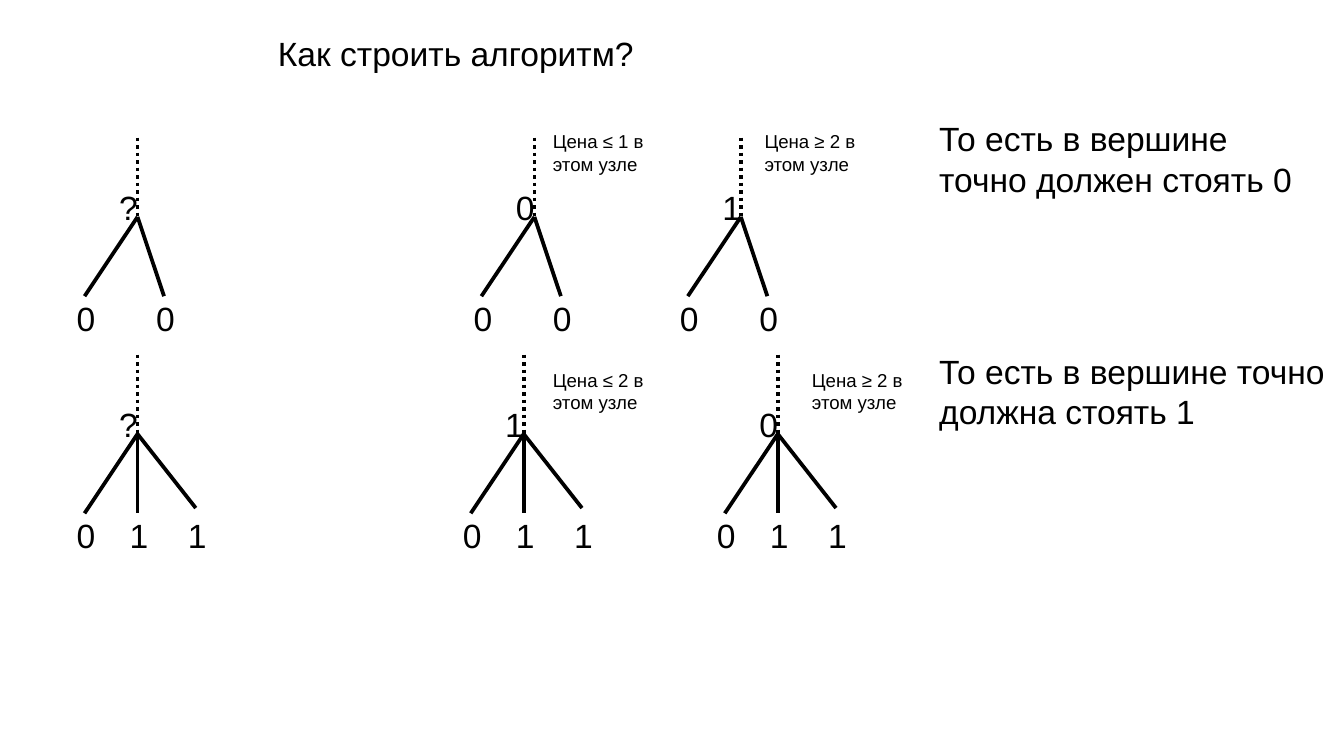
from pptx import Presentation
from pptx.dml.color import RGBColor
from pptx.enum.dml import MSO_LINE
from pptx.enum.shapes import MSO_CONNECTOR
from pptx.util import Pt
from lxml import etree

BLACK = RGBColor(0, 0, 0)
DOTS = MSO_LINE.ROUND_DOT
LINE = MSO_CONNECTOR.STRAIGHT
EFFECT = "{http://schemas.openxmlformats.org/drawingml/2006/main}effectLst"

deck = Presentation()
deck.slide_width, deck.slide_height = Pt(720), Pt(405)
slide = deck.slides.add_slide(deck.slide_layouts[6])


def write(text, left, top, width, height, size=18):
    box = slide.shapes.add_textbox(Pt(left), Pt(top), Pt(width), Pt(height))
    box.text_frame.word_wrap = True
    para = box.text_frame.paragraphs[0]
    para.text = text
    para.font.size = Pt(size)
    para.font.name = "Arial"
    para.font.color.rgb = BLACK


def draw(left, top, right, end, dash=None):
    edge = slide.shapes.add_connector(LINE, Pt(left), Pt(top), Pt(right), Pt(end))
    edge.line.color.rgb = BLACK
    edge.line.width = Pt(0)
    if dash:
        edge.line.dash_style = dash
    etree.SubElement(edge._element.spPr, EFFECT)


write("Как строить алгоритм?", 141.8, 14.2, 382.3, 27.4)

pair = [("0", -28.4, 85), ("0", 14.2, 85)]
trio = [("0", -28.4, 85), ("1", 0, 85), ("1", 31.2, 82.2)]
trees = [
    (73.7, 73.7, "?", pair),
    (286.3, 73.7, "0", pair),
    (396.9, 73.7, "1", pair),
    (73.7, 190, "?", trio),
    (280.6, 190, "1", trio),
    (416.7, 190, "0", trio),
]
for x, y, root, leaves in trees:
    fork = y + 42.5
    draw(x, y, x, fork, DOTS)
    write(root, x - 17, y + 22.7, 25.5, 27.4)
    for leaf, dx, dy in leaves:
        draw(x, fork, x + dx, y + dy)
        write(leaf, x + dx - 11.3, y + 82.2, 28.4, 27.4)

notes = [
    ("Цена ≤ 1 в этом узле", 289.1, 66.3),
    ("Цена ≥ 2 в этом узле", 402.5, 66.3),
    ("Цена ≤ 2 в этом узле", 289.1, 193.9),
    ("Цена ≥ 2 в этом узле", 427.9, 193.9),
]
for text, left, top in notes:
    write(text, left, top, 85, 47.5, 10)

write("То есть в вершине точно должен стоять 0", 496.1, 59.8, 212.6, 67.7)
write("То есть в вершине точно должна стоять 1", 496.1, 184.3, 241, 47.5)

deck.save("out.pptx")
